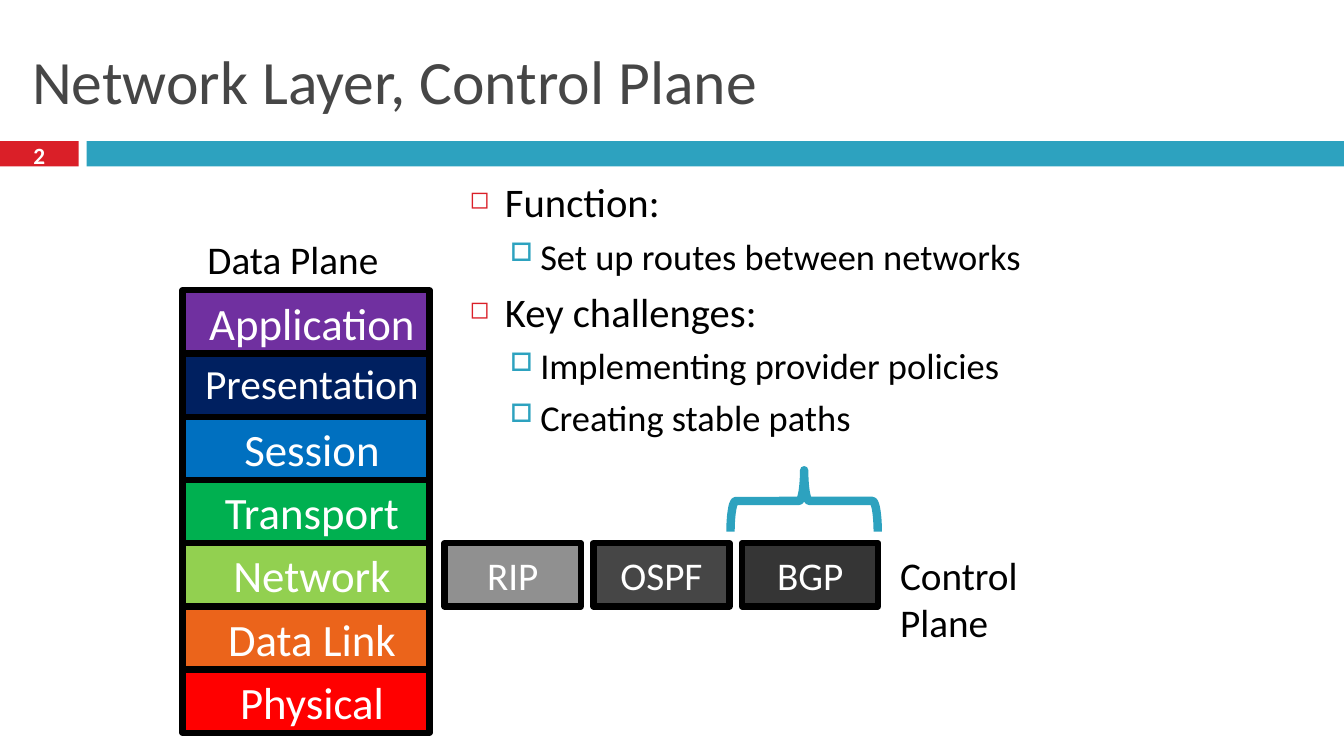
"""Build the slide on the control plane of the network layer."""
import pptx
import pptx.dml.color
import pptx.enum.shapes
import pptx.enum.text
import pptx.oxml
import pptx.oxml.ns
import pptx.util

Inches = pptx.util.Inches
Pt = pptx.util.Pt
RGBColor = pptx.dml.color.RGBColor
Shapes = pptx.enum.shapes.MSO_SHAPE
Align = pptx.enum.text.PP_ALIGN
Anchor = pptx.enum.text.MSO_ANCHOR

FONT = "Calibri"
BLACK = RGBColor(0, 0, 0)
WHITE = RGBColor(255, 255, 255)
RED = RGBColor(0xDA, 0x1F, 0x28)
TEAL = RGBColor(0x2D, 0xA2, 0xBF)
GRAY = RGBColor(0x46, 0x46, 0x46)

TITLE = "Network Layer, Control Plane"
PAGE_NUMBER = "2"
BULLETS = [
    (0, "Function:"),
    (1, "Set up routes between networks"),
    (0, "Key challenges:"),
    (1, "Implementing provider policies"),
    (1, "Creating stable paths"),
]
BULLET_STYLES = [
    {"size": 29, "before": 7, "margin": 0.35, "hang": 0.35, "mark": "◻", "color": RED, "scale": 60},
    {"size": 26, "before": 5.5, "margin": 0.7, "hang": 0.3, "mark": "□", "color": TEAL, "scale": 70},
]
LAYERS = [
    ("Application", RGBColor(0x70, 0x30, 0xA0), 32),
    ("Presentation", RGBColor(0x00, 0x20, 0x60), 29.6),
    ("Session", RGBColor(0x00, 0x70, 0xC0), 32),
    ("Transport", RGBColor(0x00, 0xB0, 0x50), 32),
    ("Network", RGBColor(0x92, 0xD0, 0x50), 32),
    ("Data Link", RGBColor(0xEB, 0x64, 0x1B), 32),
    ("Physical", RGBColor(0xFF, 0x00, 0x00), 32),
]
PROTOCOLS = [
    ("RIP", RGBColor(0x90, 0x90, 0x90)),
    ("OSPF", GRAY),
    ("BGP", RGBColor(0x35, 0x35, 0x35)),
]
STACK_LEFT, STACK_TOP, STACK_WIDTH = 1.81, 2.88, 2.45
LAYER_HEIGHT = 4.39 / len(LAYERS)
NETWORK_TOP = STACK_TOP + 4 * LAYER_HEIGHT
PROTOCOL_LEFT, PROTOCOL_WIDTH, PROTOCOL_STEP = 4.41, 1.35, 1.475


def place(*lengths):
    return [Inches(length) for length in lengths]


def style_text(para, size, color, bold=False):
    for span in para.runs:
        span.font.name = FONT
        span.font.size = Pt(size)
        span.font.bold = bold
        span.font.color.rgb = color


def add_text(page, area, text, size, color, anchor=Anchor.TOP, wrap=True):
    box = page.shapes.add_textbox(*place(*area))
    frame = box.text_frame
    frame.text = text
    frame.word_wrap = wrap
    frame.vertical_anchor = anchor
    style_text(frame.paragraphs[0], size, color)
    return box


def add_block(page, area, fill, text="", size=28, anchor=Anchor.MIDDLE, border=True):
    block = page.shapes.add_shape(Shapes.RECTANGLE, *place(*area))
    block.shadow.inherit = False
    block.fill.solid()
    block.fill.fore_color.rgb = fill
    if border:
        block.line.color.rgb = BLACK
        block.line.width = Pt(4.5)
    else:
        block.line.fill.background()
    frame = block.text_frame
    frame.text = text
    frame.vertical_anchor = anchor
    frame.margin_left = frame.margin_right = Inches(0.05)
    para = frame.paragraphs[0]
    para.alignment = Align.CENTER
    style_text(para, size, WHITE)
    return block


def set_bullet(para, style):
    properties = para._p.get_or_add_pPr()
    properties.set("marL", str(Inches(style["margin"])))
    properties.set("indent", str(-Inches(style["hang"])))
    namespace = pptx.oxml.ns.nsdecls("a")
    for markup in (
        f'<a:buClr {namespace}><a:srgbClr val="{style["color"]}"/></a:buClr>',
        f'<a:buSzPct {namespace} val="{style["scale"] * 1000}"/>',
        f'<a:buChar {namespace} char="{style["mark"]}"/>',
    ):
        properties.append(pptx.oxml.parse_xml(markup))


def add_header(page):
    add_block(page, (0, 1.4, 0.78, 0.25), RED, border=False)
    add_block(page, (0.86, 1.4, 12.47, 0.25), TEAL, border=False)
    add_text(page, (0.22, 0.25, 12.89, 1.08), TITLE, 44, GRAY, Anchor.MIDDLE)
    number = add_text(page, (0, 1.37, 0.78, 0.33), PAGE_NUMBER, 16.6, WHITE, Anchor.MIDDLE)
    para = number.text_frame.paragraphs[0]
    para.alignment = Align.CENTER
    style_text(para, 16.6, WHITE, bold=True)


def add_bullets(page):
    frame = page.shapes.add_textbox(*place(4.56, 1.71, 6.95, 2.96)).text_frame
    frame.word_wrap = True
    frame.text = "\n".join(text for level, text in BULLETS)
    for index, (para, (level, text)) in enumerate(zip(frame.paragraphs, BULLETS)):
        style = BULLET_STYLES[level]
        para.level = level
        if index:
            para.space_before = Pt(style["before"])
        set_bullet(para, style)
        style_text(para, style["size"], BLACK)


def add_stack(page):
    for index, (name, fill, size) in enumerate(LAYERS):
        area = (STACK_LEFT, STACK_TOP + index * LAYER_HEIGHT, STACK_WIDTH, LAYER_HEIGHT)
        layer = add_block(page, area, fill, name, size, Anchor.TOP)
        properties = layer.text_frame.paragraphs[0]._p.get_or_add_pPr()
        properties.set("marL", str(Inches(0.12)))


def add_protocols(page):
    for index, (name, fill) in enumerate(PROTOCOLS):
        left = PROTOCOL_LEFT + index * PROTOCOL_STEP
        add_block(page, (left, NETWORK_TOP, PROTOCOL_WIDTH, LAYER_HEIGHT), fill, name)
    brace = page.shapes.add_shape(Shapes.LEFT_BRACE, *place(7.67, 4.24, 0.61, 1.46))
    brace.rotation = 90
    brace.adjustments[0] = 0.083
    brace.shadow.inherit = False
    brace.fill.background()
    brace.line.color.rgb = TEAL
    brace.line.width = Pt(6)


def main():
    deck = pptx.Presentation()
    deck.slide_width, deck.slide_height = place(13.33, 7.5)
    page = deck.slides.add_slide(deck.slide_layouts[6])
    add_header(page)
    add_bullets(page)
    add_stack(page)
    add_protocols(page)
    control = add_text(page, (8.83, 5.42, 2.3, 0.57), "Control Plane", 28, BLACK)
    control.text_frame.margin_right = Inches(0.8)
    add_text(page, (1.96, 2.29, 1.96, 0.57), "Data Plane", 28, BLACK, wrap=False)
    deck.save("out.pptx")


if __name__ == "__main__":
    main()
